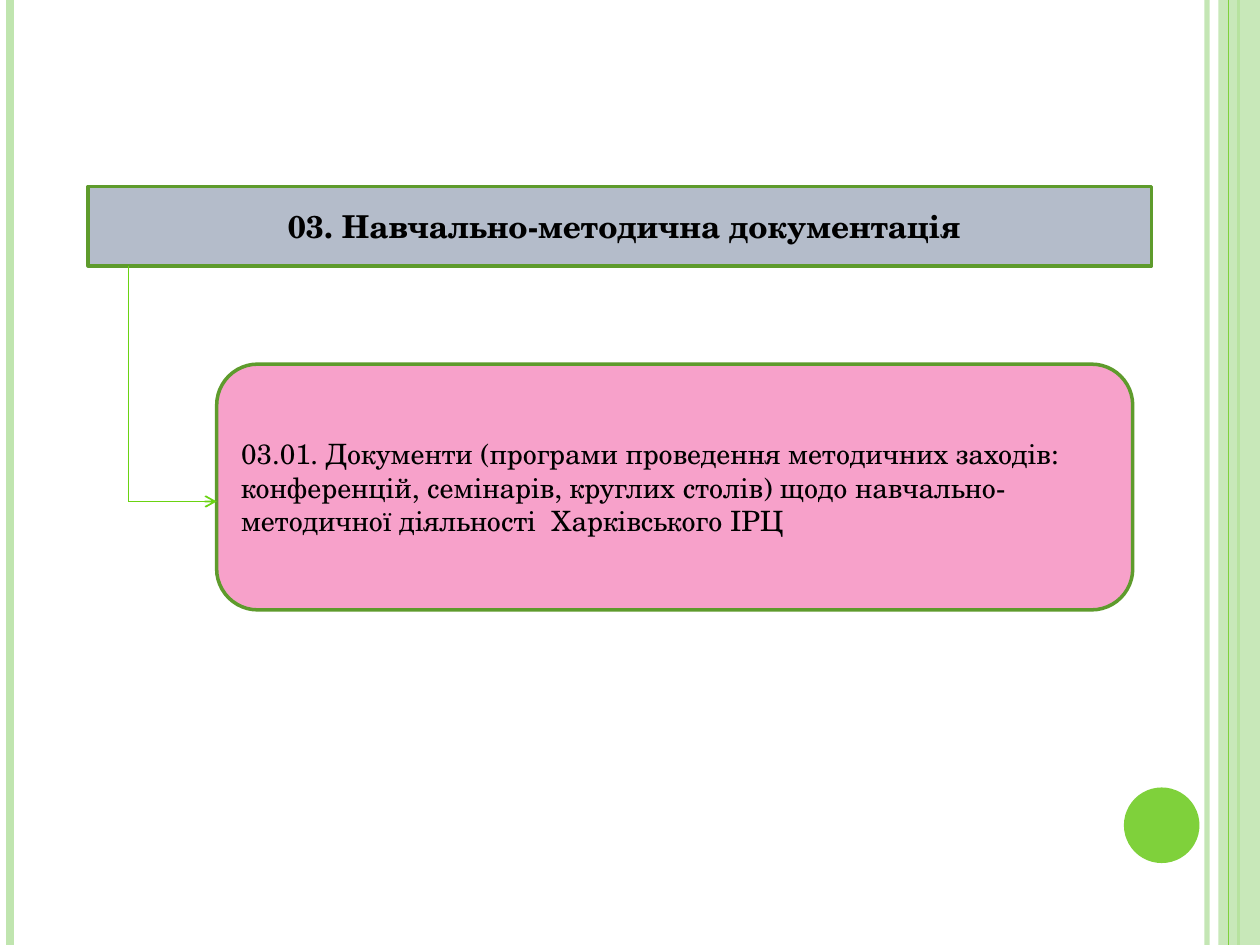
from dataclasses import dataclass

from lxml import etree
from pptx import Presentation
from pptx import util as u
from pptx.dml.color import RGBColor
from pptx.enum import shapes, text
from pptx.oxml.ns import qn


@dataclass(frozen=True)
class Theme:
    font: str = "TeX Gyre Schola"
    ink: str = "000000"
    pale_green: str = "C0E5AF"
    green: str = "7FD13B"
    border: str = "5E9B2C"
    arrow: str = "6AD312"
    heading_fill: str = "B4BCCA"
    item_fill: str = "F7A1CA"
    heading_size: int = 18
    item_size: int = 16
    border_width: int = 2


THEME = Theme()
SLIDE_W, SLIDE_H = 10, 7.5


def set_alpha(element, percent):
    """Make the solid colour inside an element partly transparent."""
    color = next(element.iter(qn("a:srgbClr")))
    etree.SubElement(color, qn("a:alpha"), val=str(percent * 1000))


def add_line(slide, start, end, color, width, alpha=None, arrow=False):
    line = slide.shapes.add_connector(
        shapes.MSO_CONNECTOR.STRAIGHT, *map(u.Inches, start + end))
    line.line.color.rgb = RGBColor.from_string(color)
    line.line.width = u.Pt(width)
    properties = line.line._get_or_add_ln()
    if alpha is not None:
        set_alpha(properties, alpha)
    if arrow:
        etree.SubElement(properties, qn("a:tailEnd"), type="arrow")
    etree.SubElement(line._element.spPr, qn("a:effectLst"))
    return line


def add_panel(slide, kind, box, fill, border=None, alpha=None):
    panel = slide.shapes.add_shape(kind, *map(u.Inches, box))
    panel.shadow.inherit = False
    panel.fill.solid()
    panel.fill.fore_color.rgb = RGBColor.from_string(fill)
    if alpha is not None:
        set_alpha(panel._element.spPr, alpha)
    if border:
        panel.line.color.rgb = RGBColor.from_string(border)
        panel.line.width = u.Pt(THEME.border_width)
    else:
        panel.line.fill.background()
    return panel


def write(panel, wording, align, **font_format):
    frame = panel.text_frame
    frame.word_wrap = True
    frame.vertical_anchor = text.MSO_ANCHOR.MIDDLE
    paragraph = frame.paragraphs[0]
    paragraph.alignment = align
    run = paragraph.add_run()
    run.text = wording
    run.font.color.rgb = RGBColor.from_string(THEME.ink)
    for name, value in {"name": THEME.font, **font_format}.items():
        setattr(run.font, name, value)


def add_side_bands(slide):
    def stripe(x, color, width, alpha=None):
        add_line(slide, (x, 0), (x, SLIDE_H), color, width, alpha)

    stripe(9.58, THEME.pale_green, 3, alpha=93)
    stripe(0.08, THEME.pale_green, 4.5)
    stripe(9.83, THEME.green, 1.5)
    band_left = 9.67
    add_panel(slide, shapes.MSO_SHAPE.RECTANGLE,
              (band_left, 0, SLIDE_W - band_left, SLIDE_H),
              THEME.pale_green, alpha=87)
    stripe(9.75, THEME.green, 0.75)
    add_panel(slide, shapes.MSO_SHAPE.OVAL, (8.92, 6.25, 0.6, 0.6), THEME.green)


def main():
    deck = Presentation()
    deck.slide_width, deck.slide_height = u.Inches(SLIDE_W), u.Inches(SLIDE_H)
    slide = deck.slides.add_slide(deck.slide_layouts[6])

    # Background decoration
    add_side_bands(slide)

    # Section heading
    heading = add_panel(slide, shapes.MSO_SHAPE.RECTANGLE,
                        (0.7, 1.48, 8.44, 0.63),
                        THEME.heading_fill, THEME.border)
    write(heading, " 03. Навчально-методична документація",
          text.PP_ALIGN.CENTER, size=u.Pt(THEME.heading_size), bold=True)

    # Document group under the heading
    item = add_panel(slide, shapes.MSO_SHAPE.ROUNDED_RECTANGLE,
                     (1.72, 2.89, 7.27, 1.95), THEME.item_fill, THEME.border)
    write(item,
          "03.01. Документи (програми проведення методичних заходів: "
          "конференцій, семінарів, круглих столів) щодо "
          "навчально-методичної діяльності  Харківського ІРЦ",
          text.PP_ALIGN.LEFT, size=u.Pt(THEME.item_size))

    # Branch from the heading to the group
    corner = (1.02, 3.98)
    add_line(slide, (corner[0], 2.11), corner, THEME.arrow, 1)
    add_line(slide, corner, (1.72, corner[1]), THEME.arrow, 1, arrow=True)

    deck.save("out.pptx")


if __name__ == "__main__":
    main()
